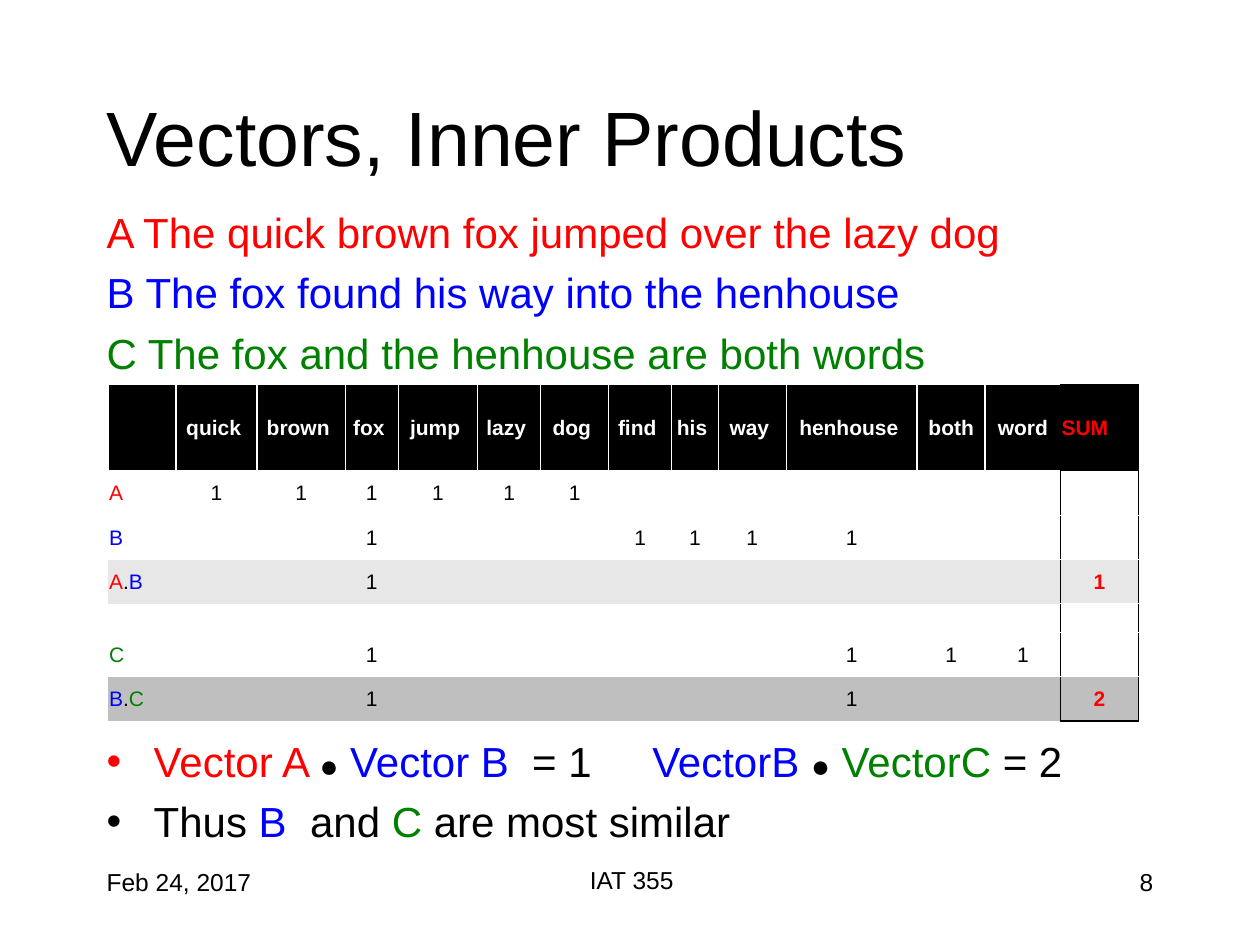
from lxml import etree
from pptx import Presentation
from pptx.dml.color import RGBColor
from pptx.enum.text import MSO_ANCHOR, PP_ALIGN
from pptx.oxml.ns import qn
from pptx.util import Cm, Pt

LEFT, CENTER, RIGHT = PP_ALIGN.LEFT, PP_ALIGN.CENTER, PP_ALIGN.RIGHT
TOP, MIDDLE = MSO_ANCHOR.TOP, MSO_ANCHOR.MIDDLE

FONT = "Arial"
NO_STYLE = "{2D5ABB26-0587-4C30-8999-92F81FD0307C}"
COLORS = {
    "black": "000000", "white": "FFFFFF", "light": "E7E7E7", "gray": "BFBFBF",
    "A": "FF0000", "B": "0000FF", "C": "008000", "sum": "FF0000",
}

# Text lines are lists of (text, colour, size) runs.
TITLE = [[("Vectors, Inner Products", "black", 44)]]
SENTENCES = [
    [("A The quick brown fox jumped over the lazy dog", "A", 24)],
    [("B The fox found his way into the henhouse", "B", 24)],
    [("C The fox and the henhouse are both words", "C", 24)],
]
CONCLUSIONS = [
    [("Vector A ", "A", 24), ("●", "black", 18), (" ", "black", 24),
     ("Vector B", "B", 24), ("  = 1\t", "black", 24),
     ("VectorB ", "B", 24), ("●", "black", 18), (" ", "black", 24),
     ("VectorC", "C", 24), (" = 2", "black", 24)],
    [("Thus ", "black", 24), ("B", "B", 24), ("  and ", "black", 24),
     ("C", "C", 24), (" are most similar", "black", 24)],
]
FOOTERS = [  # text, left, top, width, alignment
    ("Feb 24, 2017", 1.9, 17.35, 5.29, LEFT),
    ("IAT 355", 8.71, 17.32, 8.05, CENTER),
    ("8", 18.21, 17.35, 5.29, RIGHT),
]

WORDS = ["quick ", "brown ", "fox ", "jump ", "lazy ", "dog ", "find ",
         "his ", "way ", "henhouse ", "both", "word"]
VECTORS = {
    "A": {"quick", "brown", "fox", "jump", "lazy", "dog"},
    "B": {"fox", "find", "his", "way", "henhouse"},
    "C": {"fox", "henhouse", "both", "word"},
}
ROWS = [("A", "white"), ("B", "white"), ("A.B", "light"), ("", None),
        ("C", "white"), ("B.C", "gray")]
COLUMN_WIDTHS = [1.37, 1.63, 1.78, 1.07, 1.6, 1.27, 1.37, 1.27, 0.94, 1.37,
                 2.64, 1.37, 1.52, 1.57]
ROW_HEIGHTS = [1.73, 0.91, 0.89, 0.89, 0.58, 0.89, 0.89]


def add_runs(paragraph, runs, bold=False):
    for text, color, size in runs:
        run = paragraph.add_run()
        run.text = text
        run.font.name, run.font.size, run.font.bold = FONT, Pt(size), bold
        run.font.color.rgb = RGBColor.from_string(COLORS[color])


def add_text(slide, lines, left, top, width, height, align=LEFT, anchor=TOP):
    box = slide.shapes.add_textbox(Cm(left), Cm(top), Cm(width), Cm(height))
    frame = box.text_frame
    frame.word_wrap = True
    frame.vertical_anchor = anchor
    for index, runs in enumerate(lines):
        paragraph = frame.add_paragraph() if index else frame.paragraphs[0]
        paragraph.alignment = align
        paragraph.space_before = Pt(5.6 if index else 0)
        add_runs(paragraph, runs)
    return frame


def add_bullets(frame, indent, tab):
    for paragraph in frame.paragraphs:
        props = paragraph._p.get_or_add_pPr()
        props.set("marL", str(Cm(indent)))
        props.set("indent", str(-Cm(indent)))
        etree.SubElement(props, qn("a:buFont"), typeface=FONT)
        etree.SubElement(props, qn("a:buChar"), char="•")
        tabs = etree.SubElement(props, qn("a:tabLst"))
        etree.SubElement(tabs, qn("a:tab"), pos=str(Cm(tab)), algn="l")


def set_borders(cell, **sides):
    """Draw 1 pt borders; sides are L, R, T and B with colour names."""
    props = cell._tc.get_or_add_tcPr()
    lines = []
    for side in "LRTB":
        if side in sides:
            line = etree.Element(qn(f"a:ln{side}"), w=str(Pt(1)))
            fill = etree.SubElement(line, qn("a:solidFill"))
            etree.SubElement(fill, qn("a:srgbClr"), val=COLORS[sides[side]])
            lines.append(line)
    for position, line in enumerate(lines):
        props.insert(position, line)


def fill_cell(cell, runs, fill, align=CENTER, bold=False):
    cell.margin_left = cell.margin_right = cell.margin_top = Cm(0.02)
    cell.margin_bottom = 0
    cell.vertical_anchor = MIDDLE
    if fill:
        cell.fill.solid()
        cell.fill.fore_color.rgb = RGBColor.from_string(COLORS[fill])
    else:
        cell.fill.background()
    paragraph = cell.text_frame.paragraphs[0]
    paragraph.alignment = align
    add_runs(paragraph, runs, bold)
    if not runs:
        etree.SubElement(paragraph._p, qn("a:endParaRPr"), sz="1200")


def add_vector_table(slide, left, top):
    row_count, column_count = len(ROW_HEIGHTS), len(COLUMN_WIDTHS)
    last_row, last = row_count - 1, column_count - 1
    table = slide.shapes.add_table(
        row_count, column_count, Cm(left), Cm(top),
        Cm(sum(COLUMN_WIDTHS)), Cm(sum(ROW_HEIGHTS))).table
    table.first_row = table.horz_banding = False
    table._tbl.tblPr.find(qn("a:tableStyleId")).text = NO_STYLE
    for column, width in zip(table.columns, COLUMN_WIDTHS):
        column.width = Cm(width)
    for row, height in zip(table.rows, ROW_HEIGHTS):
        row.height = Cm(height)

    for c, word in enumerate([""] + WORDS):
        cell = table.cell(0, c)
        fill_cell(cell, [(word, "white", 12)] if word else [], "black", bold=True)
        set_borders(cell, L="white", T="white",
                    R="black" if c == last - 1 else "white")
    fill_cell(table.cell(0, last), [("SUM", "sum", 12)], "black", LEFT, True)
    set_borders(table.cell(0, last), L="black", R="black", T="black", B="black")

    for r, (label, fill) in enumerate(ROWS, start=1):
        names = label.split(".") if label else []
        shared = set.intersection(*(VECTORS[n] for n in names)) if names else set()
        fill_cell(table.cell(r, 0),
                  [(ch, ch if ch in VECTORS else "black", 12) for ch in label],
                  fill, LEFT)
        for c, word in enumerate(WORDS, start=1):
            mark = [("1", "black", 12)] if word.strip() in shared else []
            fill_cell(table.cell(r, c), mark, fill)
        set_borders(table.cell(r, last - 1), R="black")
        total = [(str(len(shared)), "sum", 12)] if len(names) == 2 else []
        fill_cell(table.cell(r, last), total, fill, bold=True)
        set_borders(table.cell(r, last), L="black", R="black",
                    T="black" if r == 1 else "white",
                    B="black" if r == last_row else "white")


def main():
    prs = Presentation()
    prs.slide_width, prs.slide_height = Cm(25.4), Cm(19.05)
    slide = prs.slides.add_slide(prs.slide_layouts[6])
    add_text(slide, TITLE, 1.9, 1.7, 21.59, 2.08, anchor=MIDDLE)
    add_text(slide, SENTENCES, 1.9, 4.04, 21.59, 3.6)
    add_vector_table(slide, 2.18, 7.75)
    conclusions = add_text(slide, CONCLUSIONS, 1.9, 14.7, 21.59, 2.4)
    add_bullets(conclusions, indent=0.95, tab=11)
    for text, left, top, width, align in FOOTERS:
        add_text(slide, [[(text, "black", 14)]], left, top, width, 1.27, align)
    prs.save("out.pptx")


if __name__ == "__main__":
    main()
